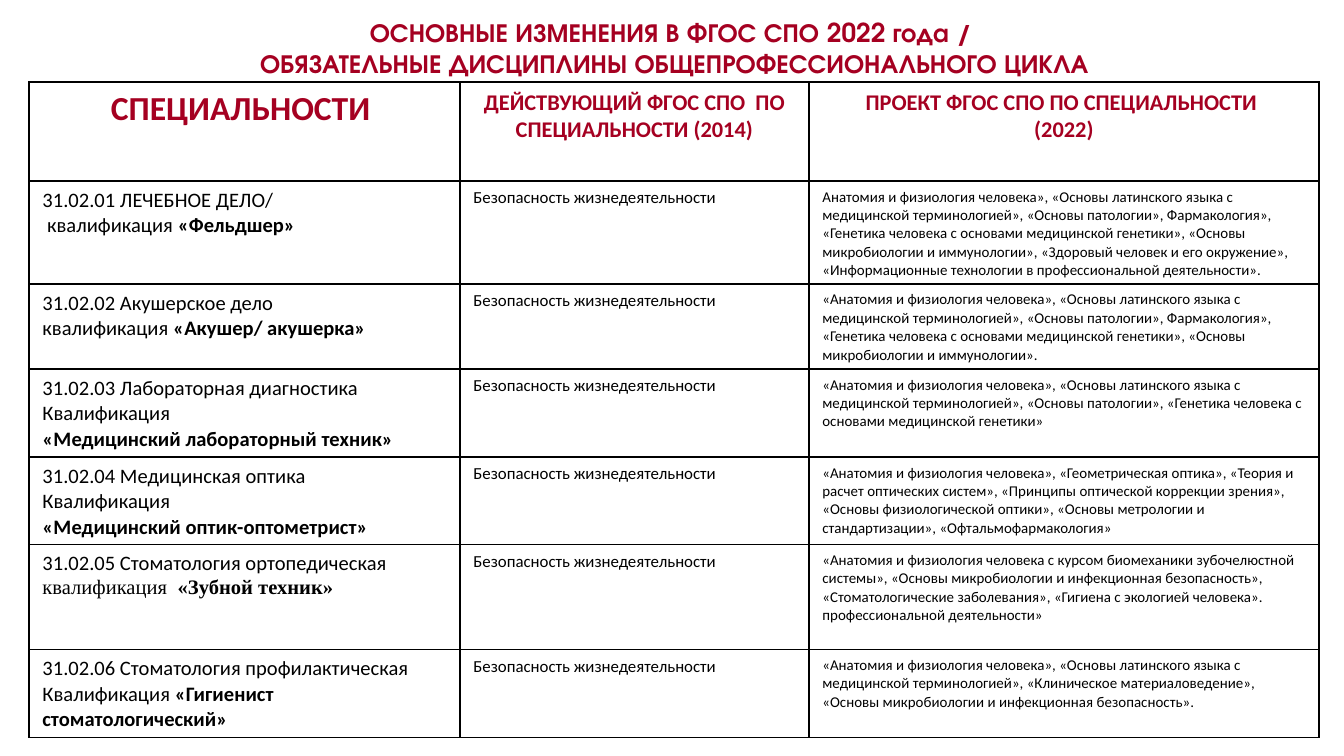
from lxml.etree import SubElement
from pptx import Presentation
from pptx.dml.color import RGBColor
from pptx.enum.text import MSO_ANCHOR, MSO_AUTO_SIZE, PP_ALIGN
from pptx.oxml.ns import qn
from pptx.util import Emu, Pt

PX_PER_INCH = 134.4
COLORS = {"red": "A50021", "black": "000000", "white": "FFFFFF"}
BODY_FONT = "Calibri"
TITLE_FONT = "TeX Gyre Adventor"
SERIF_FONT = "Times New Roman"

TITLE_LINES = [
    "ОСНОВНЫЕ ИЗМЕНЕНИЯ В ФГОС СПО 2022 года / ",
    "ОБЯЗАТЕЛЬНЫЕ ДИСЦИПЛИНЫ ОБЩЕПРОФЕССИОНАЛЬНОГО ЦИКЛА",
]
COLUMN_WIDTHS = [431, 349, 510]
ROW_HEIGHTS = [99, 103, 85, 88, 87, 105, 88]

# Header cells: lines and text size
HEADERS = [
    (["СПЕЦИАЛЬНОСТИ "], 18),
    (["ДЕЙСТВУЮЩИЙ ФГОС СПО  ПО СПЕЦИАЛЬНОСТИ (2014)"], 12),
    (["ПРОЕКТ ФГОС СПО ПО СПЕЦИАЛЬНОСТИ ", "(2022)"], 12),
]
CURRENT_DISCIPLINE = "Безопасность жизнедеятельности"

# Body rows: specialty lines as (plain, bold[, font]), then lines of the 2022 draft
SPECIALTIES = [
    ([("31.02.01 ЛЕЧЕБНОЕ ДЕЛО/", ""), (" квалификация ", "«Фельдшер»")],
     ["Анатомия и физиология человека», «Основы латинского языка с медицинской "
      "терминологией», «Основы патологии», Фармакология», «Генетика человека с "
      "основами медицинской генетики», «Основы микробиологии и иммунологии», "
      "«Здоровый человек и его окружение», «Информационные технологии в "
      "профессиональной деятельности»."]),
    ([("31.02.02 Акушерское дело", ""), ("квалификация ", "«Акушер/ акушерка»")],
     ["«Анатомия и физиология человека», «Основы латинского языка с медицинской "
      "терминологией», «Основы патологии», Фармакология», «Генетика человека с "
      "основами медицинской генетики», «Основы микробиологии и иммунологии»."]),
    ([("31.02.03 Лабораторная диагностика", ""), ("Квалификация", ""),
      ("", "«Медицинский лабораторный техник»")],
     ["«Анатомия и физиология человека», «Основы латинского языка с медицинской "
      "терминологией», «Основы патологии», «Генетика человека с основами "
      "медицинской генетики»"]),
    ([("31.02.04 Медицинская оптика", ""), ("Квалификация", ""),
      ("", "«Медицинский оптик-оптометрист»")],
     ["«Анатомия и физиология человека», «Геометрическая оптика», «Теория и расчет "
      "оптических систем», «Принципы оптической коррекции зрения», «Основы "
      "физиологической оптики», «Основы метрологии и стандартизации», "
      "«Офтальмофармакология»"]),
    ([("31.02.05 Стоматология ортопедическая", ""),
      ("квалификация  ", "«Зубной техник»", SERIF_FONT)],
     ["«Анатомия и физиология человека с курсом биомеханики зубочелюстной системы», "
      "«Основы микробиологии и инфекционная безопасность», «Стоматологические "
      "заболевания», «Гигиена с экологией человека».",
      "профессиональной деятельности»"]),
    ([("31.02.06 Стоматология профилактическая", ""),
      ("Квалификация ", "«Гигиенист стоматологический»")],
     ["«Анатомия и физиология человека», «Основы латинского языка с медицинской "
      "терминологией», «Клиническое материаловедение», «Основы микробиологии и "
      "инфекционная безопасность»."]),
]


def px(length):
    return Emu(round(length * 914400 / PX_PER_INCH))


def color(name):
    return RGBColor.from_string(COLORS[name])


def write_lines(text_frame, lines, size, color_name="black", font=BODY_FONT,
                align=PP_ALIGN.LEFT):
    """Write one paragraph per (plain, bold[, font]) line."""
    for index, (plain, bold, *own_font) in enumerate(lines):
        paragraph = text_frame.paragraphs[0] if index == 0 else text_frame.add_paragraph()
        paragraph.alignment = align
        paragraph.font.name = own_font[0] if own_font else font
        paragraph.font.size = Pt(size)
        paragraph.font.color.rgb = color(color_name)
        paragraph.font.bold = not plain
        if plain:
            paragraph.add_run().text = plain
        if bold:
            run = paragraph.add_run()
            run.text = bold
            if plain:
                run.font.bold = True


def set_borders(cell):
    properties = cell._tc.get_or_add_tcPr()
    for index, side in enumerate(("lnL", "lnR", "lnT", "lnB")):
        line = properties.makeelement(qn(f"a:{side}"), {"w": str(Pt(1))})
        fill = SubElement(line, qn("a:solidFill"))
        SubElement(fill, qn("a:srgbClr"), val=COLORS["black"])
        properties.insert(index, line)


def add_title(slide):
    title = slide.shapes.title
    title.left, title.top, title.width, title.height = map(px, (5, 9, 1339, 77))
    title.fill.solid()
    title.fill.fore_color.rgb = color("white")
    text_frame = title.text_frame
    text_frame.word_wrap = True
    text_frame.auto_size = MSO_AUTO_SIZE.SHAPE_TO_FIT_TEXT
    text_frame.vertical_anchor = MSO_ANCHOR.MIDDLE
    write_lines(text_frame, [("", line) for line in TITLE_LINES], 14, "red",
                TITLE_FONT, PP_ALIGN.CENTER)


def add_specialty_table(slide):
    frame = slide.shapes.add_table(
        len(ROW_HEIGHTS), len(COLUMN_WIDTHS), px(29), px(82),
        px(sum(COLUMN_WIDTHS)), px(sum(ROW_HEIGHTS)))
    table = frame.table
    table.first_row = table.horz_banding = False
    for column, width in zip(table.columns, COLUMN_WIDTHS):
        column.width = px(width)
    for row, height in zip(table.rows, ROW_HEIGHTS):
        row.height = px(height)

    # Header row
    for index, (lines, size) in enumerate(HEADERS):
        write_lines(table.cell(0, index).text_frame, [("", line) for line in lines],
                    size, "red", align=PP_ALIGN.CENTER)

    # One row per specialty
    for index, (specialty, draft) in enumerate(SPECIALTIES, start=1):
        write_lines(table.cell(index, 0).text_frame, specialty, 11)
        write_lines(table.cell(index, 1).text_frame, [(CURRENT_DISCIPLINE, "")], 9)
        write_lines(table.cell(index, 2).text_frame, [(line, "") for line in draft], 8)

    # Only the first specialty row is filled
    for row_index, row in enumerate(table.rows):
        for cell in row.cells:
            if row_index == 1:
                cell.fill.solid()
                cell.fill.fore_color.rgb = color("white")
            else:
                cell.fill.background()
            set_borders(cell)


def main():
    presentation = Presentation()
    presentation.slide_width, presentation.slide_height = px(1344), px(756)
    slide = presentation.slides.add_slide(presentation.slide_layouts[5])
    add_title(slide)
    add_specialty_table(slide)
    presentation.save("out.pptx")


if __name__ == "__main__":
    main()
